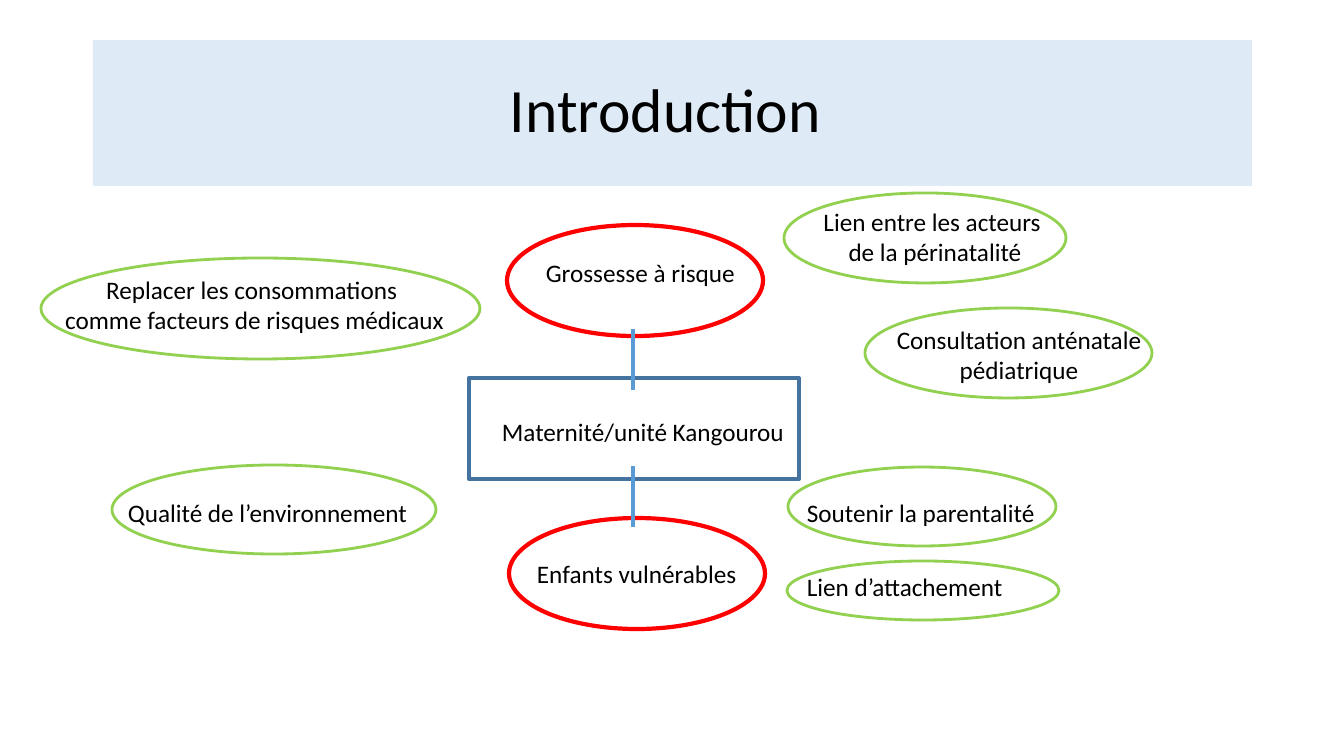
from dataclasses import dataclass

from lxml.etree import SubElement
from pptx import Presentation
from pptx.dml.color import RGBColor
from pptx.enum.shapes import MSO_CONNECTOR, MSO_SHAPE
from pptx.enum.text import MSO_ANCHOR, MSO_AUTO_SIZE, PP_ALIGN
from pptx.oxml.ns import qn
from pptx.util import Emu, Pt


@dataclass(frozen=True)
class Theme:
    font: str = "Calibri"
    title_size: int = 44
    label_size: int = 18
    text: str = "000000"
    banner: str = "DEEBF7"
    risk: str = "FF0000"
    unit: str = "43739E"
    action: str = "92D050"
    link: str = "5B9BD5"


theme = Theme()


def px(*lengths):
    """Turn pixels (100.8 to the inch) into a list of EMU lengths."""
    return [Emu(round(length * 914400 / 100.8)) for length in lengths]


def write(frame, lines, size, alignment):
    frame.text = "\n".join(lines)
    for para in frame.paragraphs:
        para.alignment = alignment
        para.font.name = theme.font
        para.font.size = Pt(size)
        para.font.color.rgb = RGBColor.from_string(theme.text)


deck = Presentation()
deck.slide_width, deck.slide_height = px(1344, 756)
page = deck.slides.add_slide(deck.slide_layouts[6])

banner = page.shapes.add_shape(MSO_SHAPE.RECTANGLE, *px(93, 40, 1159, 146))
banner.shadow.inherit = False
banner.fill.solid()
banner.fill.fore_color.rgb = RGBColor.from_string(theme.banner)
banner.line.fill.background()
banner.text_frame.word_wrap = True
banner.text_frame.vertical_anchor = MSO_ANCHOR.MIDDLE
write(banner.text_frame, ["Introduction "], theme.title_size, PP_ALIGN.CENTER)
banner.text_frame.paragraphs[0].line_spacing = 0.9

# Label lines, label (left, top, width), outline (left, top, width, height)
risks = [
    (["Grossesse à risque"], (536, 252, 217), (507, 225, 256, 111)),
    (["Enfants vulnérables"], (527, 553, 223), (509, 518, 256, 111)),
]
units = [(["Maternité/unité Kangourou"], (492, 411, 305), (469, 378, 330, 101))]
actions = [
    (["Consultation anténatale", "pédiatrique"], (885, 319, 268), (865, 308, 287, 90)),
    (["Lien entre les acteurs ", "de la périnatalité"], (812, 201, 246), (784, 193, 282, 90)),
    (["Replacer les consommations ", "comme facteurs de risques médicaux"],
     (53, 269, 403), (41, 258, 439, 101)),
    (["Soutenir la parentalité"], (797, 492, 256), (788, 467, 268, 79)),
    (["Lien d’attachement"], (797, 566, 225), (787, 561, 272, 59)),
    (["Qualité de l’environnement"], (118, 492, 309), (112, 465, 324, 89)),
]
groups = [
    (risks, MSO_SHAPE.OVAL, theme.risk, 3),
    (units, MSO_SHAPE.RECTANGLE, theme.unit, 3),
    (actions, MSO_SHAPE.OVAL, theme.action, 2),
]

for bubbles, preset, color, weight in groups:
    for lines, label_place, outline_place in bubbles:
        label_height = 9 + 31 * len(lines)
        label = page.shapes.add_textbox(*px(*label_place, label_height))
        label.text_frame.word_wrap = False
        label.text_frame.auto_size = MSO_AUTO_SIZE.SHAPE_TO_FIT_TEXT
        alignment = PP_ALIGN.CENTER if len(lines) > 1 else PP_ALIGN.LEFT
        write(label.text_frame, lines, theme.label_size, alignment)

        outline = page.shapes.add_shape(preset, *px(*outline_place))
        outline.shadow.inherit = False
        outline.fill.background()
        outline.line.color.rgb = RGBColor.from_string(color)
        outline.line.width = Pt(weight)

for top in (329, 466):
    link = page.shapes.add_connector(MSO_CONNECTOR.STRAIGHT, *px(633, top, 633, top + 61))
    link.line.color.rgb = RGBColor.from_string(theme.link)
    link.line.width = Pt(3)
    SubElement(link._element.spPr, qn("a:effectLst"))

deck.save("out.pptx")
